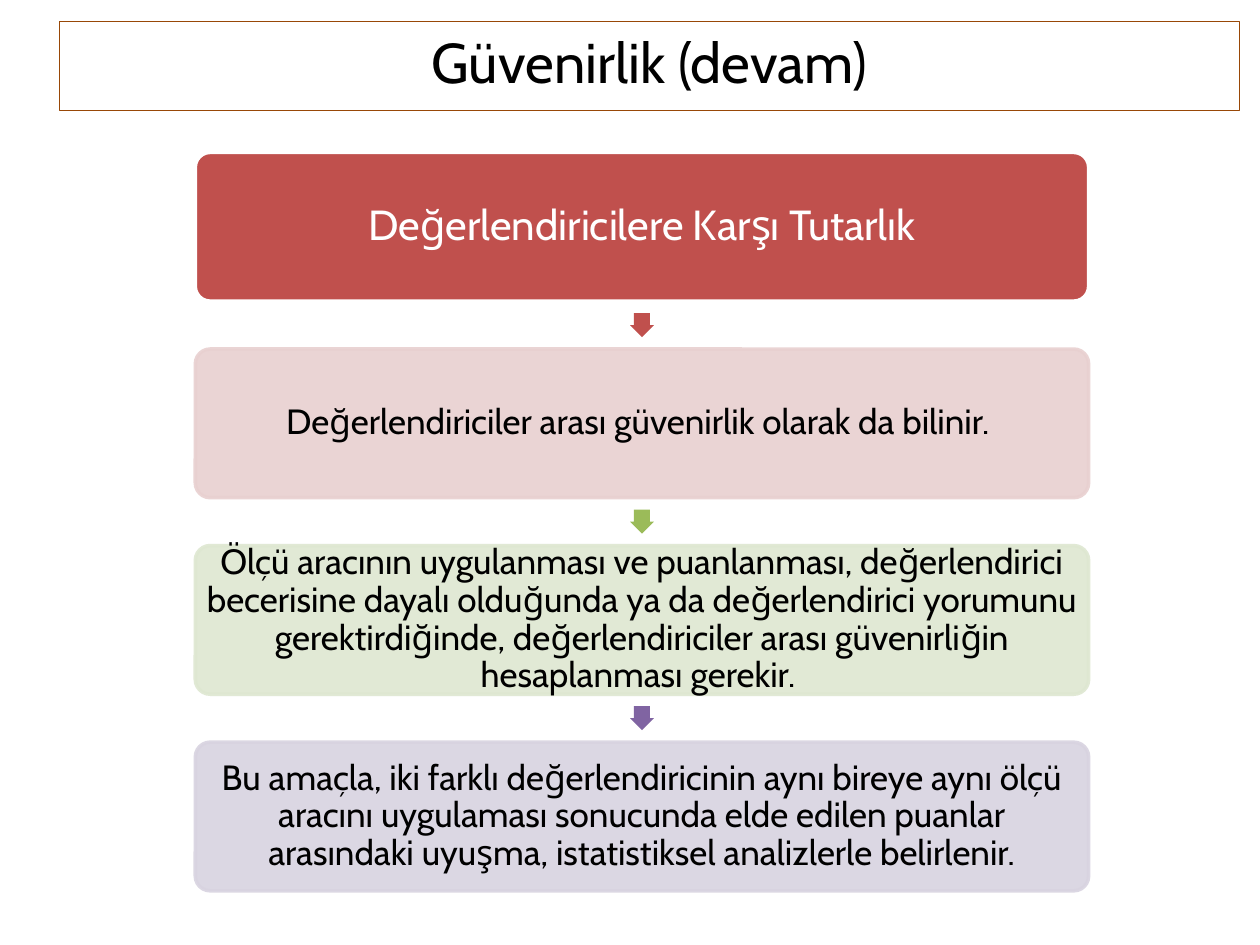
from dataclasses import dataclass

from pptx import Presentation
from pptx.dml.color import RGBColor
from pptx.enum.shapes import MSO_SHAPE
from pptx.enum.text import MSO_ANCHOR, MSO_AUTO_SIZE, PP_ALIGN
from pptx.oxml.ns import qn
from pptx.oxml.xmlchemy import OxmlElement
from pptx.util import Inches, Pt


@dataclass(frozen=True)
class Theme:
    font: str = "Cabin"
    title_size: int = 32
    heading_size: int = 24
    body_size: int = 20
    black: str = "000000"
    white: str = "FFFFFF"
    brown: str = "984807"
    red: str = "C0504D"
    green: str = "9BBB59"
    purple: str = "8064A2"
    pale_red: str = "E8D0D0"
    pale_green: str = "DEE7D1"
    pale_purple: str = "D8D3E0"


THEME = Theme()

BOX_LEFT, BOX_TOP, BOX_WIDTH, BOX_HEIGHT = 1.55, 1.21, 7.09, 1.18
BOX_STEP = 1.56
ARROW_SIZE = 0.19
BOX_INSET = 0.03


@dataclass(frozen=True)
class Step:
    text: str
    fill: str
    line: str
    size: int = THEME.body_size
    color: str = THEME.black
    opacity: int = 90
    arrow_color: str | None = None  # arrow leading to the next step


STEPS = [
    Step("Değerlendiricilere Karşı Tutarlık", THEME.red, THEME.white,
         size=THEME.heading_size, color=THEME.white, opacity=100,
         arrow_color=THEME.red),
    Step("Değerlendiriciler arası güvenirlik olarak da bilinir. ",
         THEME.pale_red, THEME.pale_red, arrow_color=THEME.green),
    Step("Ölçü aracının uygulanması ve puanlanması, değerlendirici becerisine "
         "dayalı olduğunda ya da değerlendirici yorumunu gerektirdiğinde, "
         "değerlendiriciler arası güvenirliğin hesaplanması gerekir. ",
         THEME.pale_green, THEME.pale_green, arrow_color=THEME.purple),
    Step("Bu amaçla, iki farklı değerlendiricinin aynı bireye aynı ölçü aracını "
         "uygulaması sonucunda elde edilen puanlar arasındaki uyuşma, "
         "istatistiksel analizlerle belirlenir.",
         THEME.pale_purple, THEME.pale_purple),
]


def set_opacity(fill, percent: int) -> None:
    """Add an alpha value to a solid fill's colour."""
    if percent < 100:
        alpha = OxmlElement("a:alpha")
        alpha.set("val", str(percent * 1000))
        fill._xPr.find(qn("a:solidFill"))[0].append(alpha)


def write_text(shape, text: str, *, size: int, color: str,
               anchor=MSO_ANCHOR.MIDDLE, inset: float | None = None,
               line_spacing: float = 1.0) -> None:
    frame = shape.text_frame
    frame.text = text
    frame.word_wrap = True
    frame.auto_size = MSO_AUTO_SIZE.NONE
    frame.vertical_anchor = anchor
    if inset is not None:
        frame.margin_left = frame.margin_right = Inches(inset)
        frame.margin_top = frame.margin_bottom = Inches(inset)
    paragraph = frame.paragraphs[0]
    paragraph.alignment = PP_ALIGN.CENTER
    paragraph.line_spacing = line_spacing
    paragraph.space_before = Pt(0)
    font = paragraph.runs[0].font
    font.name = THEME.font
    font.size = Pt(size)
    font.color.rgb = RGBColor.from_string(color)


def add_title(slide, text: str) -> None:
    title = slide.shapes.title
    title.left, title.top = Inches(0.47), Inches(0.17)
    title.width, title.height = Inches(9.37), Inches(0.71)
    title.line.color.rgb = RGBColor.from_string(THEME.brown)
    title.line.width = Pt(0.75)
    write_text(title, text, size=THEME.title_size, color=THEME.black,
               anchor=MSO_ANCHOR.TOP)


def add_box(slide, step: Step, top: float) -> None:
    box = slide.shapes.add_shape(
        MSO_SHAPE.ROUNDED_RECTANGLE, Inches(BOX_LEFT), Inches(top),
        Inches(BOX_WIDTH), Inches(BOX_HEIGHT))
    box.shadow.inherit = False
    box.adjustments[0] = 0.1
    box.line.width = Pt(2)
    for fill, color in ((box.fill, step.fill), (box.line.fill, step.line)):
        fill.solid()
        fill.fore_color.rgb = RGBColor.from_string(color)
        set_opacity(fill, step.opacity)
    write_text(box, step.text, size=step.size, color=step.color,
               inset=BOX_INSET, line_spacing=0.9)


def add_arrow(slide, color: str, box_top: float) -> None:
    """Centre a down arrow in the gap below the box at box_top."""
    left = BOX_LEFT + (BOX_WIDTH - ARROW_SIZE) / 2
    top = box_top + (BOX_HEIGHT + BOX_STEP - ARROW_SIZE) / 2
    arrow = slide.shapes.add_shape(
        MSO_SHAPE.DOWN_ARROW, Inches(left), Inches(top),
        Inches(ARROW_SIZE), Inches(ARROW_SIZE))
    arrow.shadow.inherit = False
    arrow.adjustments[0] = 0.67
    arrow.adjustments[1] = 0.5
    arrow.fill.solid()
    arrow.fill.fore_color.rgb = RGBColor.from_string(color)
    arrow.line.fill.background()


def main() -> None:
    presentation = Presentation()
    presentation.slide_width = Inches(10)
    presentation.slide_height = Inches(7.5)
    slide = presentation.slides.add_slide(presentation.slide_layouts[5])

    add_title(slide, "Güvenirlik (devam)")
    for index, step in enumerate(STEPS):
        top = BOX_TOP + index * BOX_STEP
        add_box(slide, step, top)
        if step.arrow_color:
            add_arrow(slide, step.arrow_color, top)

    presentation.save("out.pptx")


if __name__ == "__main__":
    main()
